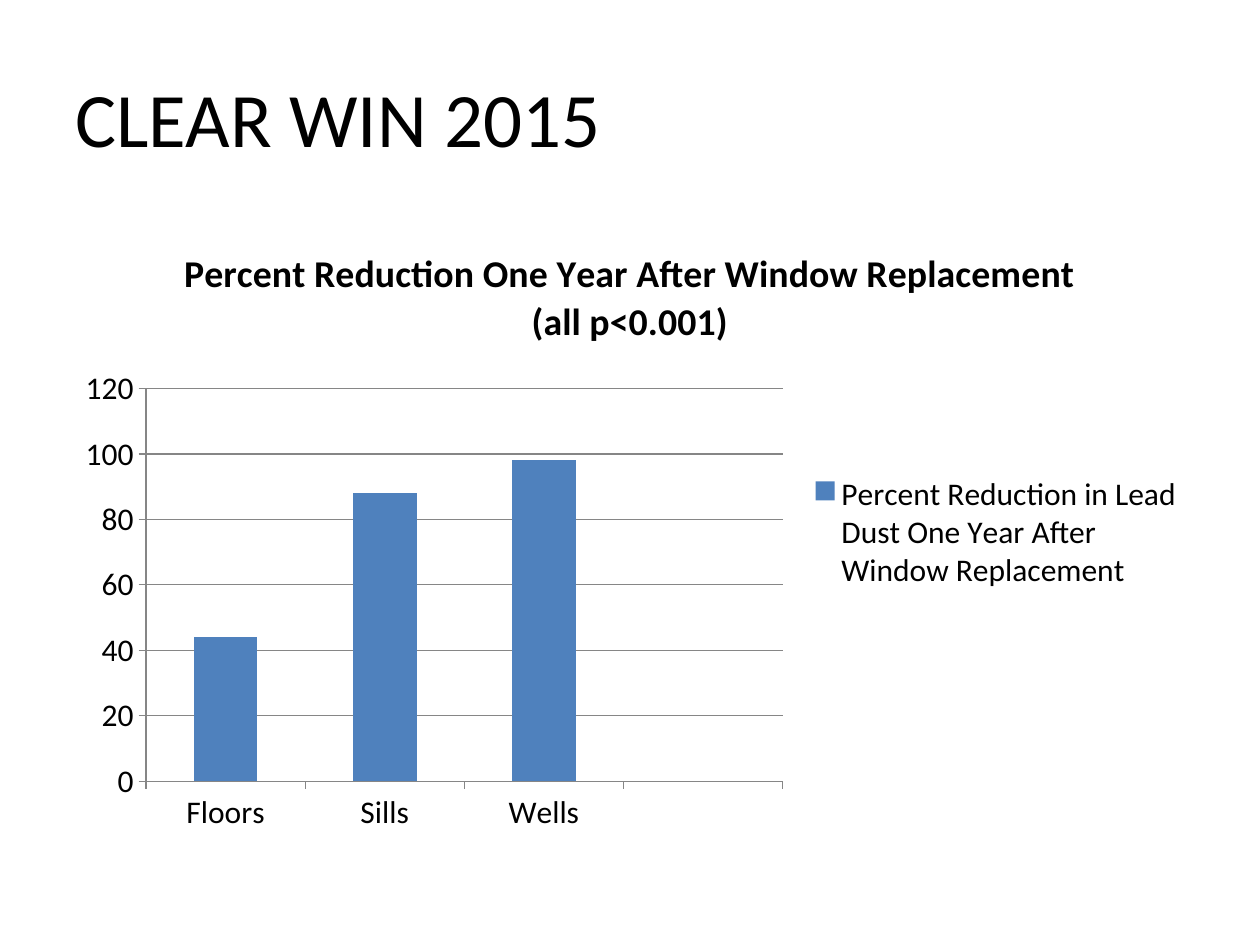
from pptx import Presentation
from pptx.chart.data import CategoryChartData
from pptx.dml.color import RGBColor
from pptx.enum.chart import XL_CHART_TYPE, XL_LEGEND_POSITION, XL_TICK_MARK
from pptx.enum.text import MSO_ANCHOR, PP_ALIGN
from pptx.util import Inches, Pt

TITLE = "CLEAR WIN 2015"
CHART_TITLE = "Percent Reduction One Year After Window Replacement (all p<0.001)"
SERIES_NAME = "Percent Reduction in Lead Dust One Year After Window Replacement"
REDUCTIONS = [("Floors", 44), ("Sills", 88), ("Wells", 98), ("", None)]
BLACK, BLUE, GRAY = "000000", "4F81BD", "868686"
LEFT, WIDTH = Inches(0.5), Inches(9)


def set_font(font, size, bold=False):
    font.name = "Calibri"
    font.size = Pt(size)
    font.bold = bold
    font.color.rgb = RGBColor.from_string(BLACK)


def set_line(line):
    line.color.rgb = RGBColor.from_string(GRAY)
    line.width = Pt(0.75)


def add_title(slide):
    title = slide.shapes.title
    title.left, title.top, title.width, title.height = LEFT, Inches(0.3), WIDTH, Inches(1.25)
    title.text_frame.text = TITLE
    title.text_frame.vertical_anchor = MSO_ANCHOR.MIDDLE
    paragraph = title.text_frame.paragraphs[0]
    paragraph.alignment = PP_ALIGN.LEFT
    set_font(paragraph.font, 44)


def add_reduction_chart(slide):
    categories, values = zip(*REDUCTIONS)
    chart_data = CategoryChartData()
    chart_data.categories = categories
    chart_data.add_series(SERIES_NAME, values)
    chart = slide.shapes.add_chart(XL_CHART_TYPE.COLUMN_CLUSTERED, LEFT, Inches(1.75),
                                   WIDTH, Inches(4.95), chart_data).chart
    set_font(chart.font, 18)

    chart.has_title = True
    chart.chart_title.include_in_layout = False
    chart.chart_title.text_frame.text = CHART_TITLE
    set_font(chart.chart_title.text_frame.paragraphs[0].font, 21.6, bold=True)

    chart.has_legend = True
    chart.legend.position = XL_LEGEND_POSITION.RIGHT
    chart.legend.include_in_layout = False
    set_font(chart.legend.font, 18)

    for axis in (chart.category_axis, chart.value_axis):
        axis.major_tick_mark = XL_TICK_MARK.OUTSIDE
        axis.minor_tick_mark = XL_TICK_MARK.NONE
        set_line(axis.format.line)
        set_font(axis.tick_labels.font, 18)
    chart.value_axis.minimum_scale = 0
    chart.value_axis.maximum_scale = 120
    chart.value_axis.major_unit = 20
    chart.value_axis.has_major_gridlines = True
    set_line(chart.value_axis.major_gridlines.format.line)

    plot = chart.plots[0]
    plot.gap_width = 150
    plot.vary_by_categories = False
    fill = plot.series[0].format.fill
    fill.solid()
    fill.fore_color.rgb = RGBColor.from_string(BLUE)


def main():
    """Build the slide on window replacement results."""
    presentation = Presentation()
    presentation.slide_width, presentation.slide_height = Inches(10), Inches(7.5)
    slide = presentation.slides.add_slide(presentation.slide_layouts[5])
    add_title(slide)
    add_reduction_chart(slide)
    presentation.save("out.pptx")


if __name__ == "__main__":
    main()
